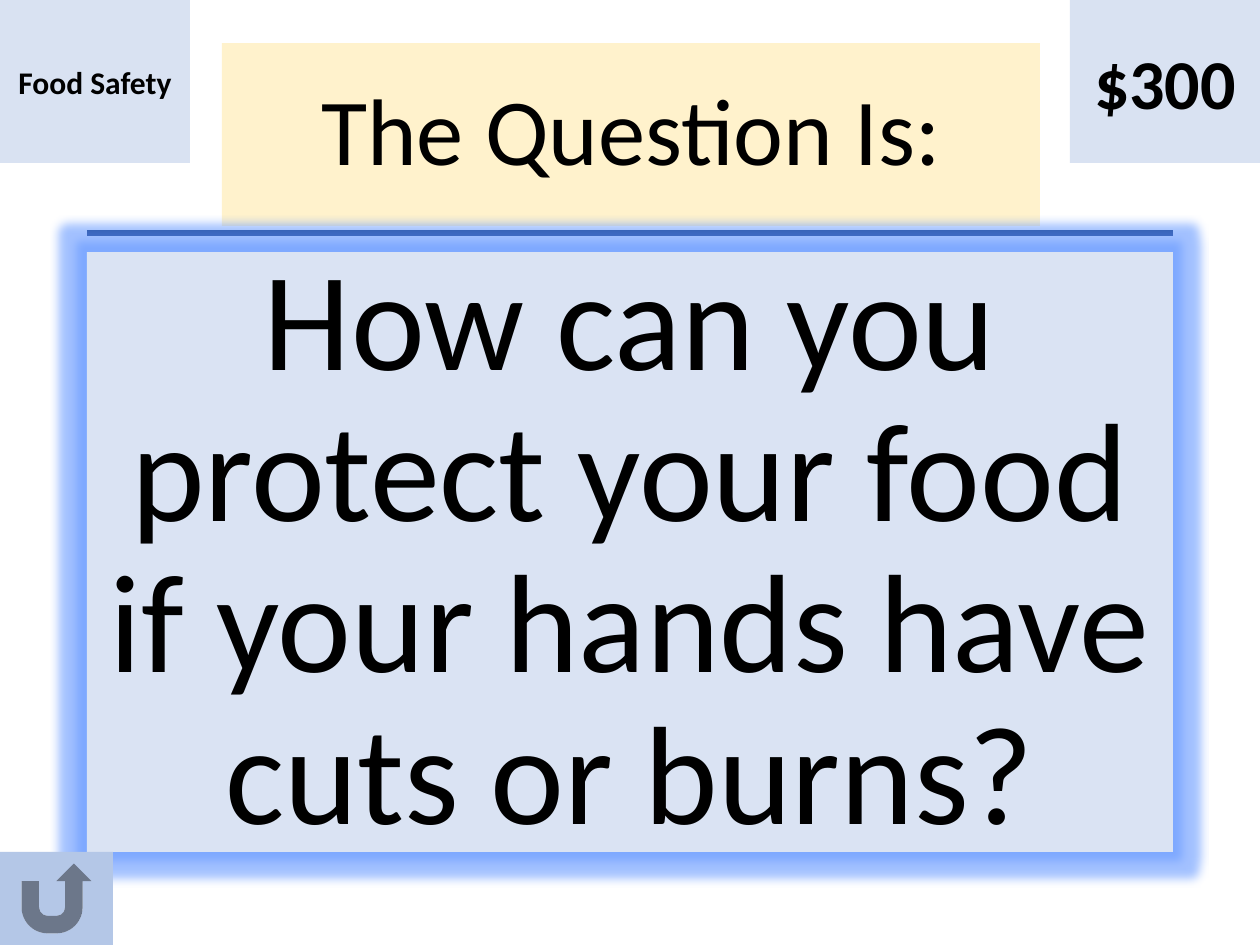
from dataclasses import dataclass

from lxml.etree import SubElement
from pptx import Presentation
from pptx.dml.color import RGBColor
from pptx.enum.shapes import MSO_CONNECTOR, MSO_SHAPE
from pptx.enum.text import MSO_ANCHOR, MSO_AUTO_SIZE, PP_ALIGN
from pptx.oxml.ns import qn
from pptx.util import Emu, Pt

PX_PER_INCH = 126
SLIDE_W, SLIDE_H = 1260, 945
FONT = "Calibri"
BLUE = "B4C7E7"


@dataclass(frozen=True)
class Box:
    left: int
    top: int
    width: int
    height: int


@dataclass(frozen=True)
class Tag:
    text: str
    left: int
    size: int


TAG_W, TAG_H = 190, 163
TAGS = [Tag("Food Safety", 0, 18), Tag("$300", SLIDE_W - TAG_W, 40)]


def px(n: int) -> Emu:
    return Emu(round(n * 914400 / PX_PER_INCH))


def rgb(color: str) -> RGBColor:
    return RGBColor.from_string(color)


def place(sp, box: Box) -> None:
    sp.left, sp.top = px(box.left), px(box.top)
    sp.width, sp.height = px(box.width), px(box.height)


def set_fill(sp, color: str) -> None:
    sp.fill.solid()
    sp.fill.fore_color.rgb = rgb(color)


def set_text(sp, text: str, size: int, bold: bool = False,
             spacing: float = 1.0) -> None:
    tf = sp.text_frame
    tf.text = text
    tf.word_wrap = True
    tf.auto_size = MSO_AUTO_SIZE.NONE
    tf.vertical_anchor = MSO_ANCHOR.MIDDLE
    p = tf.paragraphs[0]
    p.alignment = PP_ALIGN.CENTER
    p.line_spacing = spacing
    font = p.runs[0].font
    font.name, font.size, font.bold = FONT, Pt(size), bold
    font.color.rgb = rgb("000000")


def add_alpha(color_el, percent: int) -> None:
    SubElement(color_el, qn("a:alpha"), val=str(percent * 1000))


def add_glow(sp, color: str, radius: int, opacity: int) -> None:
    effects = sp._element.spPr.find(qn("a:effectLst"))
    glow = SubElement(effects, qn("a:glow"), rad=str(px(radius)))
    add_alpha(SubElement(glow, qn("a:srgbClr"), val=color), opacity)


def add_box(slide, kind: MSO_SHAPE, box: Box, color: str):
    sp = slide.shapes.add_shape(kind, 0, 0, 0, 0)
    place(sp, box)
    set_fill(sp, color)
    sp.line.fill.background()
    sp.shadow.inherit = False
    return sp


def add_rule(slide, left: int, right: int, y: int) -> None:
    rule = slide.shapes.add_connector(
        MSO_CONNECTOR.STRAIGHT, px(left), px(y), px(right), px(y))
    rule.line.color.rgb = rgb("002060")
    rule.line.width = Pt(3)
    SubElement(rule._element.spPr, qn("a:effectLst"))


def add_tag(slide, tag: Tag) -> None:
    box = Box(tag.left, 0, TAG_W, TAG_H)
    sp = add_box(slide, MSO_SHAPE.ACTION_BUTTON_CUSTOM, box, BLUE)
    add_alpha(sp._element.spPr.find(qn("a:solidFill"))[0], 50)
    set_text(sp, tag.text, tag.size, bold=True)


def main() -> None:
    prs = Presentation()
    prs.slide_width, prs.slide_height = px(SLIDE_W), px(SLIDE_H)
    slide = prs.slides.add_slide(prs.slide_layouts[5])

    title = slide.shapes.title
    place(title, Box(222, 43, 818, 183))
    set_fill(title, "FFF2CC")
    set_text(title, "The Question Is:", 54, spacing=0.9)

    add_rule(slide, 87, 1173, 233)
    question = add_box(slide, MSO_SHAPE.RECTANGLE, Box(87, 252, 1086, 600), "DAE3F3")
    add_glow(question, "6699FF", 18, 60)
    set_text(question, "How can you protect your food if your hands have cuts or burns?",
             80, spacing=0.9)

    add_box(slide, MSO_SHAPE.ACTION_BUTTON_RETURN, Box(0, 852, 113, 93), BLUE)
    for tag in TAGS:
        add_tag(slide, tag)

    prs.save("out.pptx")


if __name__ == "__main__":
    main()
